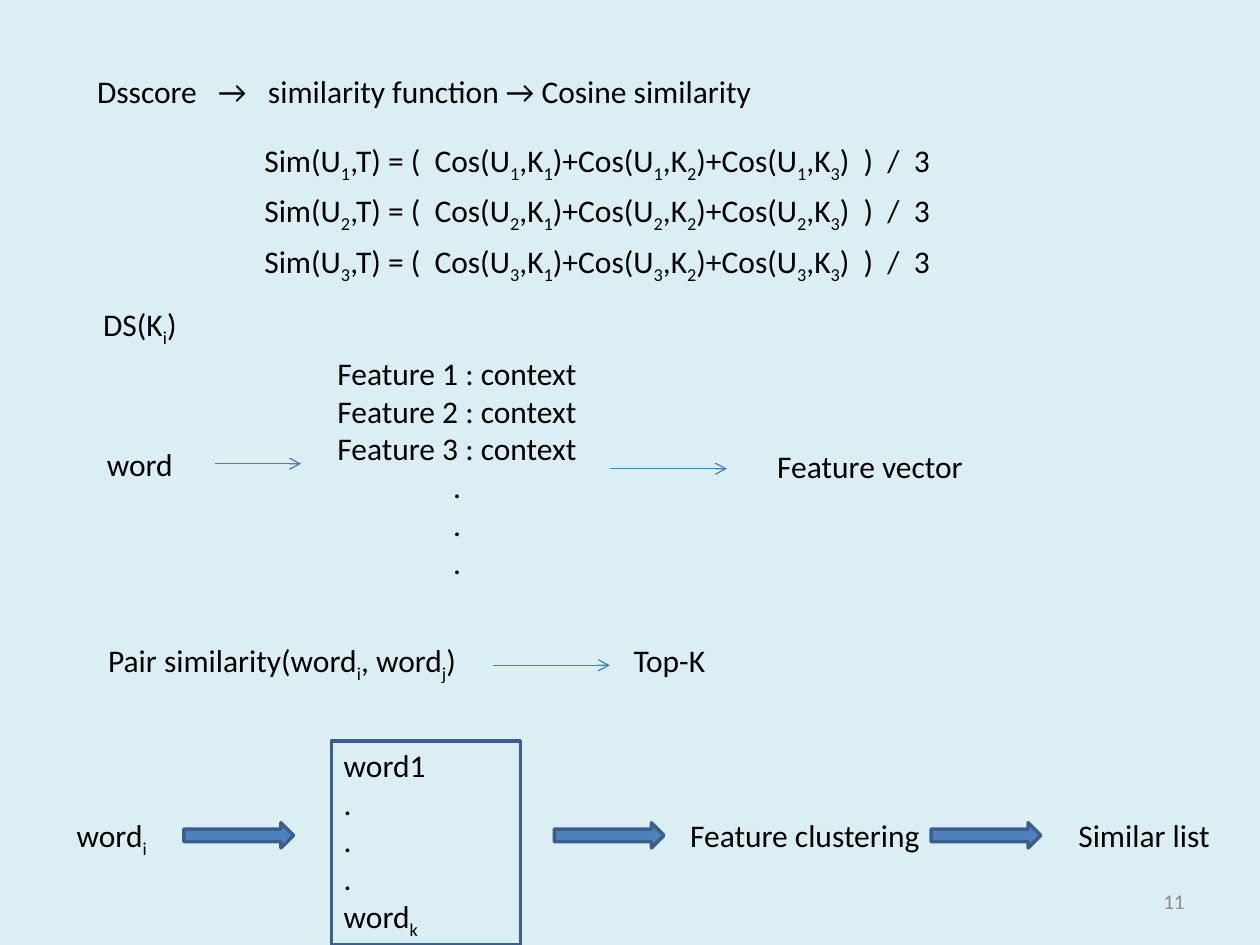
from lxml import etree
from pptx import Presentation
from pptx.dml.color import RGBColor
from pptx.enum.shapes import MSO_CONNECTOR, MSO_SHAPE
from pptx.enum.text import MSO_ANCHOR, MSO_AUTO_SIZE, PP_ALIGN
from pptx.oxml.ns import qn
from pptx.util import Inches, Pt

LEFT, MID, RIGHT = PP_ALIGN.LEFT, PP_ALIGN.CENTER, PP_ALIGN.RIGHT
TOP, CENTRE = MSO_ANCHOR.TOP, MSO_ANCHOR.MIDDLE
FIT, FIXED = MSO_AUTO_SIZE.SHAPE_TO_FIT_TEXT, MSO_AUTO_SIZE.NONE
RECT, ARROW = MSO_SHAPE.RECTANGLE, MSO_SHAPE.RIGHT_ARROW
STRAIGHT = MSO_CONNECTOR.STRAIGHT
ROW = 0.4  # height of one line of text, in inches
BLUE, EDGE, THIN = "4F81BD", "3A5F8C", "4B7EBC"


def rgb(code):
    return RGBColor.from_string(code)


def inch(*nums):
    return [Inches(n) for n in nums]


def write(frame, lines, size=18, color="000000", aligns=None):
    """Fill a frame; the character after each underscore is a subscript."""
    for i, line in enumerate(lines):
        para = frame.paragraphs[0] if i == 0 else frame.add_paragraph()
        para.alignment = aligns[i] if aligns else LEFT
        para.font.name, para.font.size = "Calibri", Pt(size)
        para.font.color.rgb = rgb(color)
        first, *rest = line.split("_")
        para.add_run().text = first
        for part in rest:
            sub = para.add_run()
            sub.text = part[0]
            sub._r.get_or_add_rPr().set("baseline", "-25000")
            if part[1:]:
                para.add_run().text = part[1:]


def label(slide, x, y, w, *lines, aligns=None):
    box = slide.shapes.add_textbox(*inch(x, y, w, ROW))
    box.text_frame.word_wrap = False
    box.text_frame.auto_size = FIT
    write(box.text_frame, lines, aligns=aligns)
    box.height = Inches(0.1 + 0.3 * len(lines))
    return box


def thin(slide, x, y, w):
    """Draw a thin arrow to the right."""
    line = slide.shapes.add_connector(STRAIGHT, *inch(x, y, x + w, y))
    line.line.color.rgb = rgb(THIN)
    line.line.width = Pt(0.75)
    etree.SubElement(line.line._get_or_add_ln(), qn("a:tailEnd"), type="arrow")
    etree.SubElement(line._element.spPr, qn("a:effectLst"))


def block(slide, kind, x, y, w, h, fill=None):
    shape = slide.shapes.add_shape(kind, *inch(x, y, w, h))
    shape.shadow.inherit = False
    if fill:
        shape.fill.solid()
        shape.fill.fore_color.rgb = rgb(fill)
    else:
        shape.fill.background()
    shape.line.color.rgb = rgb(EDGE)
    shape.line.width = Pt(2)
    return shape


def heading(slide, x, y, w):
    title = slide.shapes.title
    title.left, title.top, title.width, title.height = inch(x, y, w, ROW)
    frame = title.text_frame
    frame.word_wrap, frame.auto_size = False, FIXED
    frame.vertical_anchor = TOP
    write(frame, ["Dsscore   →   similarity function → Cosine similarity"])


def formulas(slide, x, y, w):
    for n in (1, 2, 3):
        terms = "+".join(f"Cos(U_{n},K_{k})" for k in (1, 2, 3))
        label(slide, x, y + (n - 1) * ROW, w,
              f"Sim(U_{n},T) = (  {terms}  )  /  3")


def features(slide, x, y):
    label(slide, x, y, 0.86, "DS(K_i)")
    label(slide, x + 0.03, y + 1.11, 0.73, "word")
    thin(slide, x + 0.99, y + 1.31, 0.68)
    names = [f"Feature {n} : context" for n in (1, 2, 3)]
    label(slide, x + 1.86, y + 0.39, 2.12, *names, *"...",
          aligns=[LEFT] * 3 + [MID] * 3)
    thin(slide, x + 4.12, y + 1.35, 0.93)
    label(slide, x + 5.35, y + 1.13, 1.69, "Feature vector")


def pairs(slide, x, y):
    label(slide, x, y, 3.04, "Pair similarity(word_i, word_j)")
    thin(slide, x + 3.15, y + 0.24, 0.93)
    label(slide, x + 4.17, y, 0.78, "Top-K")


def flow(slide, x, y):
    """Place the bottom chain: word, list, clustering, result."""
    steps = [(0, 0.79, "word_i"), (4.87, 2.04, "Feature clustering"),
             (7.95, 1.25, "Similar list")]
    for dx, w, text in steps:
        label(slide, x + dx, y, w, text)
    for dx in (0.95, 3.89, 6.88):
        block(slide, ARROW, x + dx, y + 0.1, 0.87, 0.2, BLUE)
    frame = block(slide, RECT, x + 2.12, y - 0.55, 1.5, 1.62).text_frame
    frame.word_wrap, frame.vertical_anchor = True, CENTRE
    write(frame, ["word1", *"...", "word_k"])


def number(slide, x, y, w):
    box = slide.shapes.add_textbox(*inch(x, y, w, ROW))
    box.text_frame.word_wrap = True
    box.text_frame.vertical_anchor = CENTRE
    write(box.text_frame, ["11"], 12, "8C8C8C", [RIGHT])


def main():
    deck = Presentation()
    deck.slide_width, deck.slide_height = inch(10, 7.5)
    slide = deck.slides.add_slide(deck.slide_layouts[5])
    slide.background.fill.solid()
    slide.background.fill.fore_color.rgb = rgb("DBEEF4")
    number(slide, 7.17, 6.95, 2.33)
    heading(slide, 0.67, 0.52, 5.55)
    formulas(slide, 2, 1.07, 5.67)
    features(slide, 0.72, 2.37)
    pairs(slide, 0.76, 5.04)
    flow(slide, 0.51, 6.43)
    deck.save("out.pptx")


if __name__ == "__main__":
    main()
